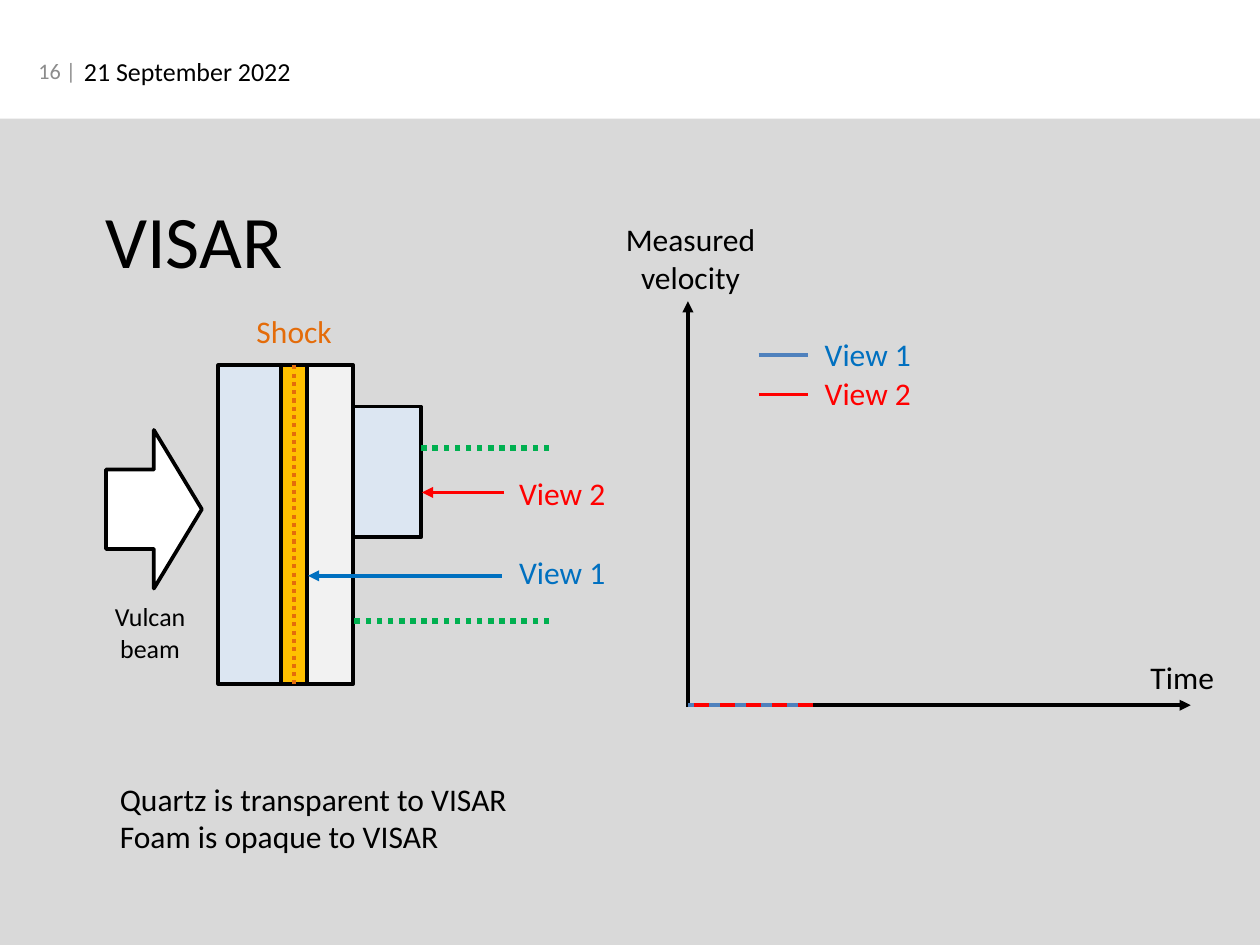
"""Build the VISAR slide: a layered target with two views beside an empty velocity graph."""
from dataclasses import dataclass
from typing import Optional

from lxml import etree
from pptx import Presentation
from pptx.dml.color import RGBColor
from pptx.enum import dml, shapes, text
from pptx.oxml.ns import qn
from pptx.util import Pt


@dataclass(frozen=True)
class Theme:
    font: str = "Calibri"
    black: str = "000000"
    white: str = "FFFFFF"
    grey: str = "8C8C8C"
    panel: str = "D9D9D9"
    quartz: str = "DCE6F2"
    gold: str = "FFC000"
    foam: str = "F2F2F2"
    orange: str = "E46C0A"
    blue: str = "0070C0"
    steel: str = "4F81BD"
    red: str = "FF0000"
    green: str = "00B050"
    title_size: float = 40
    label_size: float = 17
    small_size: float = 14
    number_size: float = 12
    outline: float = 2


@dataclass(frozen=True)
class Block:
    left: float
    top: float
    width: float
    height: float
    fill: str
    line: Optional[str] = Theme.black
    kind: shapes.MSO_SHAPE = shapes.MSO_SHAPE.RECTANGLE


@dataclass(frozen=True)
class Line:
    x1: float
    y1: float
    x2: float
    y2: float
    color: str
    weight: float = Theme.outline
    dash: Optional[dml.MSO_LINE] = None
    arrow: bool = False


@dataclass(frozen=True)
class Label:
    words: str
    left: float
    top: float
    width: float
    height: float
    color: str = Theme.black
    size: float = Theme.label_size
    align: text.PP_ALIGN = text.PP_ALIGN.LEFT
    anchor: text.MSO_ANCHOR = text.MSO_ANCHOR.TOP


WIDTH, HEIGHT = 680.4, 510.4
PANEL_TOP = 64.1
TARGET_LEFT, TARGET_TOP, TARGET_HEIGHT = 117.8, 197.3, 172.1
LAYERS = ((34, Theme.quartz), (14, Theme.gold), (25, Theme.foam))
TARGET_RIGHT = TARGET_LEFT + sum(width for width, _ in LAYERS)
STEP = Block(TARGET_RIGHT, 219.6, 36.5, 70.6, Theme.quartz)
STEP_RIGHT = STEP.left + STEP.width
BEAM = Block(57.2, 232.2, 51.8, 85.7, Theme.white, kind=shapes.MSO_SHAPE.RIGHT_ARROW)
AXIS_X, AXIS_Y = 371.5, 380.9
DOT, DASH = dml.MSO_LINE.ROUND_DOT, dml.MSO_LINE.DASH
CENTER = text.PP_ALIGN.CENTER

LINES = (
    Line(AXIS_X, AXIS_Y, 643, AXIS_Y, Theme.black, arrow=True),
    Line(AXIS_X, AXIS_Y + 1, AXIS_X, 162.7, Theme.black, arrow=True),
    Line(437, AXIS_Y, AXIS_X, AXIS_Y, Theme.steel),
    Line(439.2, AXIS_Y, 369.4, AXIS_Y, Theme.red, dash=DASH),
    Line(296.6, 241.9, STEP_RIGHT, 241.9, Theme.green, 3, DOT),
    Line(296.6, 335.5, TARGET_RIGHT, 335.5, Theme.green, 3, DOT),
    Line(409.7, 191.9, 436.3, 191.9, Theme.steel),
    Line(409.7, 213.1, 436.3, 213.1, Theme.red),
    Line(272.2, 266, STEP_RIGHT + 0.6, 266, Theme.red, arrow=True),
    Line(271, 311, 166.3, 311, Theme.blue, arrow=True),
)

LABELS = (
    Label("21 September 2022", 38.2, 26.6, 396.7, 24.5, size=Theme.small_size),
    Label("16 |", 8.6, 24.5, 39.6, 27.4, Theme.grey, Theme.number_size,
          text.PP_ALIGN.RIGHT, text.MSO_ANCHOR.MIDDLE),
    Label("Vulcan beam", 49, 321.1, 64.1, 41, size=Theme.small_size, align=CENTER),
    Label("Shock", 131.4, 164.9, 68.4, 28.1, Theme.orange),
    Label("View 1", 438.2, 177.5, 68.4, 28.1, Theme.blue),
    Label("View 2", 438.2, 198.7, 68.4, 28.1, Theme.red),
    Label("Time", 614.2, 352.1, 66, 28.1),
    Label("Measured velocity", 321.8, 115.2, 102.2, 48.2, align=CENTER),
    Label("Quartz is transparent to VISAR\nFoam is opaque to VISAR", 57.6, 417.6, 255.6, 48.2),
    Label("View 2", 273.2, 252.7, 68.4, 28.1, Theme.red),
    Label("View 1", 273.2, 295.4, 68.4, 28.1, Theme.blue),
)

TITLE = Label("VISAR", 49.7, 101.5, 550, 55.4, size=Theme.title_size)


def draw_block(slide, block: Block):
    """Draw a filled shape and return it."""
    shape = slide.shapes.add_shape(
        block.kind, Pt(block.left), Pt(block.top), Pt(block.width), Pt(block.height))
    shape.shadow.inherit = False
    shape.fill.solid()
    shape.fill.fore_color.rgb = RGBColor.from_string(block.fill)
    if block.line:
        shape.line.color.rgb = RGBColor.from_string(block.line)
        shape.line.width = Pt(Theme.outline)
    else:
        shape.line.fill.background()
    return shape


def draw_line(slide, line: Line):
    """Draw a straight connector and return it."""
    connector = slide.shapes.add_connector(
        shapes.MSO_CONNECTOR.STRAIGHT, Pt(line.x1), Pt(line.y1), Pt(line.x2), Pt(line.y2))
    connector.line.color.rgb = RGBColor.from_string(line.color)
    connector.line.width = Pt(line.weight)
    if line.dash is not None:
        connector.line.dash_style = line.dash
    properties = connector.element.spPr
    if line.arrow:
        etree.SubElement(properties.find(qn("a:ln")), qn("a:tailEnd"), type="triangle")
    etree.SubElement(properties, qn("a:effectLst"))
    return connector


def write_label(shape, label: Label) -> None:
    """Place a text shape and format its words."""
    shape.left, shape.top = Pt(label.left), Pt(label.top)
    shape.width, shape.height = Pt(label.width), Pt(label.height)
    frame = shape.text_frame
    frame.text = label.words
    frame.word_wrap = True
    frame.auto_size = text.MSO_AUTO_SIZE.NONE
    frame.vertical_anchor = label.anchor
    for paragraph in frame.paragraphs:
        paragraph.alignment = label.align
        for run in paragraph.runs:
            run.font.name = Theme.font
            run.font.size = Pt(label.size)
            run.font.color.rgb = RGBColor.from_string(label.color)


def draw_target(slide) -> None:
    """Draw the layers side by side, the step and the shock front in the gold layer."""
    left = TARGET_LEFT
    layers = {}
    for width, fill in LAYERS:
        layers[fill] = draw_block(slide, Block(left, TARGET_TOP, width, TARGET_HEIGHT, fill))
        left += width
    draw_block(slide, STEP)
    middle = TARGET_LEFT + LAYERS[0][0] + LAYERS[1][0] / 2
    shock = draw_line(slide, Line(middle, TARGET_TOP, middle, TARGET_TOP + TARGET_HEIGHT,
                                  Theme.orange, 2.25, DOT))
    shock.begin_connect(layers[Theme.gold], 0)
    shock.end_connect(layers[Theme.gold], 2)


def main() -> None:
    """Build and save the presentation."""
    presentation = Presentation()
    presentation.slide_width, presentation.slide_height = Pt(WIDTH), Pt(HEIGHT)
    slide = presentation.slides.add_slide(presentation.slide_layouts.get_by_name("Title Only"))
    panel = draw_block(slide, Block(0, PANEL_TOP, WIDTH, HEIGHT - PANEL_TOP, Theme.panel, None))
    title = slide.shapes.title
    title.element.addprevious(panel.element)
    write_label(title, TITLE)
    draw_target(slide)
    draw_block(slide, BEAM)
    for line in LINES:
        draw_line(slide, line)
    for label in LABELS:
        write_label(slide.shapes.add_textbox(0, 0, 0, 0), label)
    presentation.save("out.pptx")


if __name__ == "__main__":
    main()
